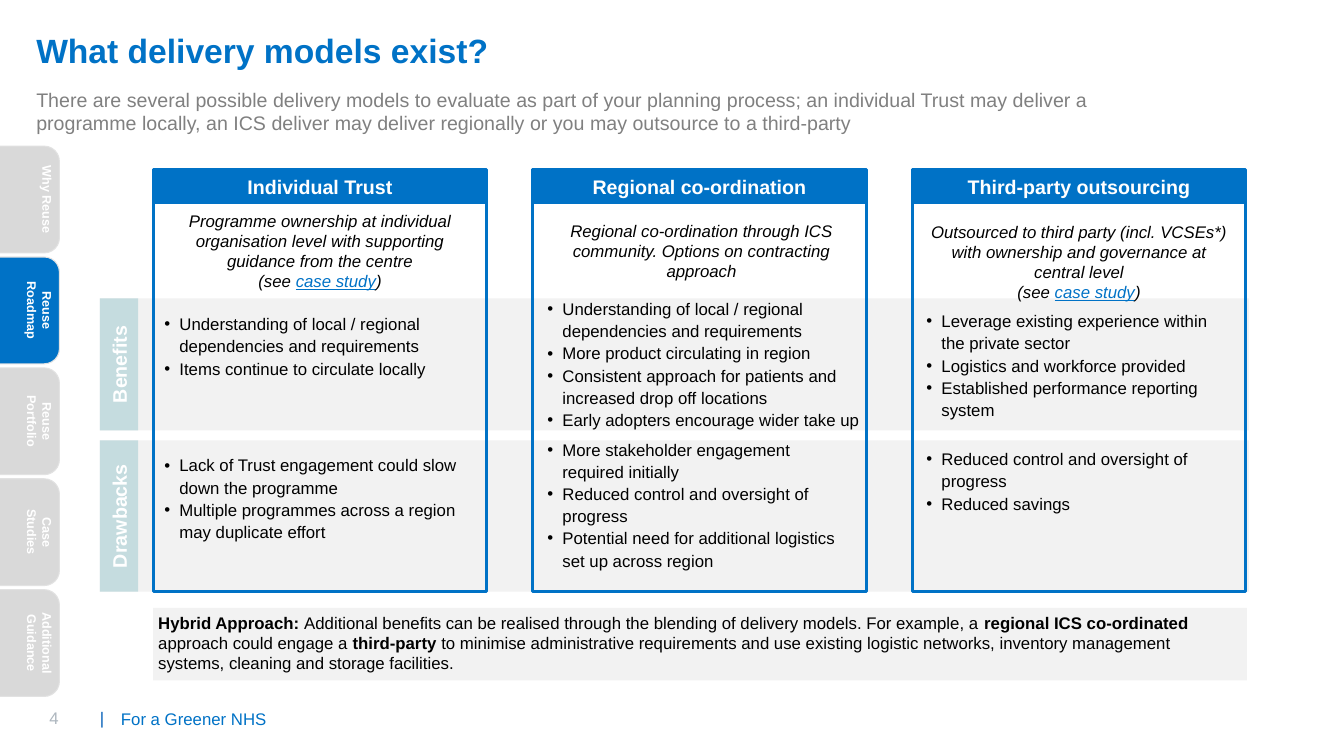
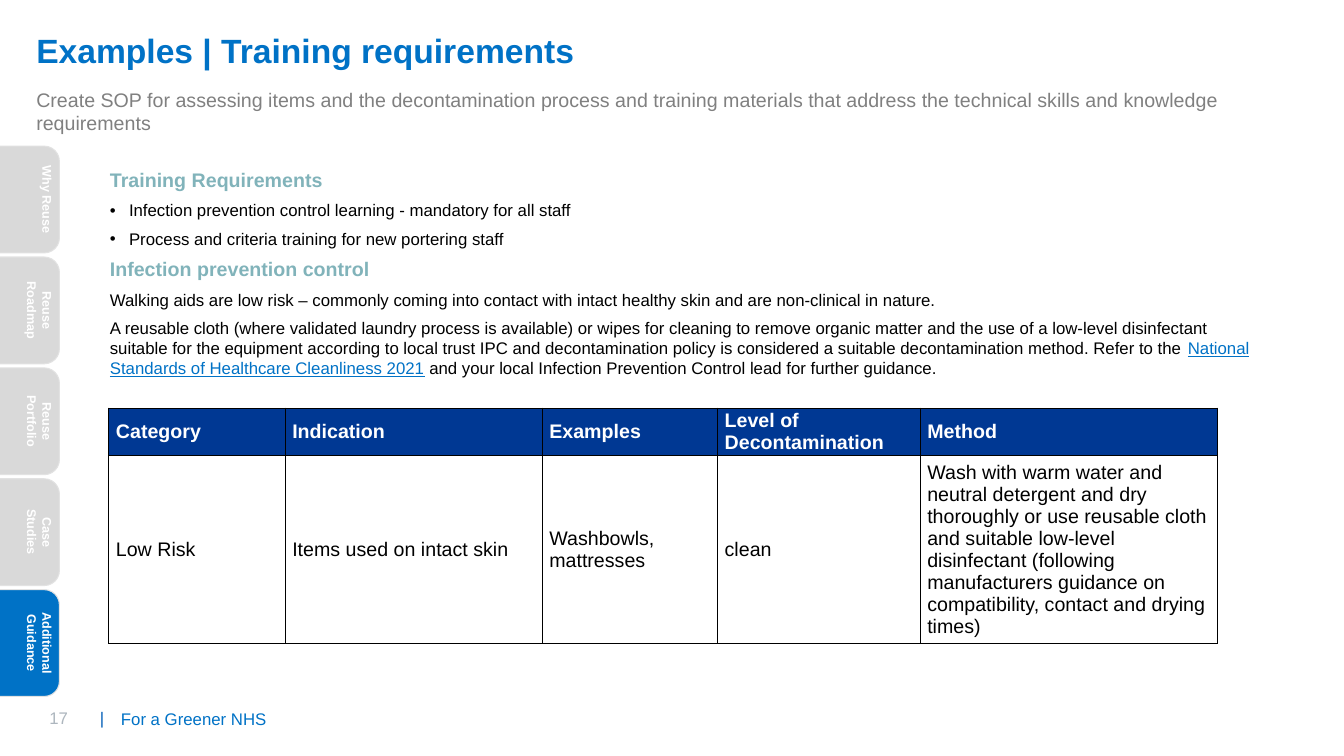
"""Build two slides on reuse programmes: delivery models and training requirements."""
import lxml.etree
import pptx
import pptx.dml.color
import pptx.enum.shapes
import pptx.enum.text
import pptx.oxml.ns
import pptx.util


class Theme:
    FONT = "Arial"
    BLUE, NAVY, BAR_BLUE = "0072C6", "003893", "005EB8"
    TEAL, PALE_TEAL = "81B3BA", "C5DCDF"
    GREY, PAGE_GREY, TAB_GREY = "808080", "ADB6BE", "D9D9D9"
    BAND, EDGE, WHITE, BLACK = "F2F2F2", "E2E2E2", "FFFFFF", "000000"
    TITLE, HEADING, BODY, TAB = 24, 14, 12, 9
    THIN, FRAME = 0.75, 2.25


qn = pptx.oxml.ns.qn
rgb = pptx.dml.color.RGBColor.from_string
RECTANGLE = pptx.enum.shapes.MSO_SHAPE.RECTANGLE
ROUNDED = pptx.enum.shapes.MSO_SHAPE.ROUNDED_RECTANGLE
TOP = pptx.enum.text.MSO_ANCHOR.TOP
MIDDLE = pptx.enum.text.MSO_ANCHOR.MIDDLE
CENTER = pptx.enum.text.PP_ALIGN.CENTER

presentation = pptx.Presentation()
presentation.slide_width = pptx.util.Inches(13.33)
presentation.slide_height = pptx.util.Inches(7.5)
COLUMN = presentation.slide_width / 80
ROW = presentation.slide_height / 45


def add_box(slide, left, top, width, height, kind=None, fill=None, line=None,
            line_width=Theme.THIN, anchor=TOP, inset=(0.3, 0.3), vertical=None):
    """Add a text box or shape placed in grid columns and rows."""
    area = [round(left * COLUMN), round(top * ROW), round(width * COLUMN), round(height * ROW)]
    if kind is None:
        shape = slide.shapes.add_textbox(*area)
    else:
        shape = slide.shapes.add_shape(kind, *area)
        shape.shadow.inherit = False
        if fill:
            shape.fill.solid()
            shape.fill.fore_color.rgb = rgb(fill)
        else:
            shape.fill.background()
        if line:
            shape.line.color.rgb = rgb(line)
            shape.line.width = pptx.util.Pt(line_width)
        else:
            shape.line.fill.background()
    frame = shape.text_frame
    frame.word_wrap = True
    frame.vertical_anchor = anchor
    frame.margin_left = frame.margin_right = round(inset[0] * COLUMN)
    frame.margin_top = frame.margin_bottom = round(inset[1] * ROW)
    if vertical:
        frame._txBody.bodyPr.set("vert", vertical)
    return shape


def write(frame, *runs, align=pptx.enum.text.PP_ALIGN.LEFT, spacing=None, after=None,
          indent=0, hang=0, tab=None, **style):
    """Write one paragraph; a run is a string or a (string, style changes) pair."""
    paragraph = frame.paragraphs[0]
    if paragraph.runs:
        paragraph = frame.add_paragraph()
    paragraph.alignment = align
    properties = paragraph._p.get_or_add_pPr()
    properties.set("marL", str(round(indent * COLUMN)))
    properties.set("indent", str(round(-hang * COLUMN)))
    if hang:
        lxml.etree.SubElement(properties, qn("a:buFont"), typeface=Theme.FONT)
        lxml.etree.SubElement(properties, qn("a:buChar"), char="•")
    if tab:
        tabs = lxml.etree.SubElement(properties, qn("a:tabLst"))
        lxml.etree.SubElement(tabs, qn("a:tab"), pos=str(round(tab * COLUMN)), algn="l")
    if spacing:
        paragraph.line_spacing = spacing
    if after:
        paragraph.space_after = pptx.util.Pt(after)
    for item in runs:
        text, changes = (item, {}) if isinstance(item, str) else item
        look = {"size": Theme.BODY, "color": Theme.BLACK} | style | changes
        run = paragraph.add_run()
        run.text = text
        run.font.name = Theme.FONT
        run.font.size = pptx.util.Pt(look["size"])
        run.font.color.rgb = rgb(look["color"])
        run.font.bold = look.get("bold", False)
        run.font.italic = look.get("italic", False)
        run.font.underline = look.get("underline", False)


LINK = {"color": Theme.BLUE, "underline": True}
BOLD = {"bold": True}
WHITE_HEADING = {"size": Theme.HEADING, "color": Theme.WHITE, "bold": True}

tab_names = ["Why Reuse", "Reuse Roadmap", "Reuse Portfolio", "Case Studies", "Additional Guidance"]
pages = [
    ("4", "What delivery models exist?", "Reuse Roadmap", 65.4,
     "There are several possible delivery models to evaluate as part of your planning process; "
     "an individual Trust may deliver a programme locally, an ICS deliver may deliver regionally "
     "or you may outsource to a third-party"),
    ("17", "Examples | Training requirements", "Additional Guidance", 71.7,
     "Create SOP for assessing items and the decontamination process and training materials that "
     "address the technical skills and knowledge requirements"),
]

for number, title, active_tab, subtitle_width, subtitle in pages:
    slide = presentation.slides.add_slide(presentation.slide_layouts[6])
    footer = add_box(slide, 6.6, 41.58, 46.2, 2.4, anchor=MIDDLE, inset=(0.6, 0.3))
    write(footer.text_frame, "For a Greener NHS", color=Theme.BLUE)
    page_number = add_box(slide, 2.34, 41.82, 5.22, 1.8, inset=(0.6, 0.3))
    write(page_number.text_frame, number, ("\t|", {"color": Theme.BAR_BLUE}),
          color=Theme.PAGE_GREY, tab=0.83 + 0.56 * len(number))
    heading = add_box(slide, 2.16, 1.5, 65.4, 3.2, inset=(0, 0.3))
    write(heading.text_frame, title, size=Theme.TITLE, color=Theme.BLUE, bold=True)
    summary = add_box(slide, 2.16, 4.92, subtitle_width, 3.24, inset=(0, 0.3))
    write(summary.text_frame, subtitle, size=Theme.HEADING, color=Theme.GREY)
    for index, name in enumerate(tab_names):
        fill = Theme.BLUE if name == active_tab else Theme.TAB_GREY
        side_tab = add_box(slide, -1.2, 8.7 + 6.6 * index, 4.74, 6.36, ROUNDED, fill, Theme.EDGE,
                           inset=(0, 0.6), vertical="vert")
        side_tab.adjustments[0] = 0.19
        write(side_tab.text_frame, name, align=CENTER, size=Theme.TAB, color=Theme.WHITE, bold=True)

delivery_slide, training_slide = presentation.slides

for name, top, height in [("Benefits", 17.76, 7.86), ("Drawbacks", 26.22, 9)]:
    add_box(delivery_slide, 5.94, top, 68.4, height, RECTANGLE, Theme.BAND)
    label = add_box(delivery_slide, 5.94, top, 2.28, height, RECTANGLE, Theme.PALE_TEAL,
                    anchor=MIDDLE, vertical="vert270")
    write(label.text_frame, name, align=CENTER, **WHITE_HEADING)

case_study = ["(see ", ("case study", LINK), ")"]
models = [
    ("Individual Trust", 0.36,
     (12.12, 5.64, 19.14, [
         ["Programme ownership at individual organisation level with supporting guidance from the centre"],
         case_study]),
     (18.24, 4.62, 19.14, [
         "Understanding of local / regional dependencies and requirements",
         "Items continue to circulate locally"]),
     (26.64, 5.94, 19.14, [
         "Lack of Trust engagement could slow down the programme",
         "Multiple programmes across a region may duplicate effort"])),
    ("Regional co-ordination", 0.57,
     (12.78, 4.32, 18.96, [
         ["Regional co-ordination through ICS community. Options on contracting approach"]]),
     (17.34, 8.58, 19.38, [
         "Understanding of local / regional dependencies and requirements",
         "More product circulating in region",
         "Consistent approach for patients and increased drop off locations",
         "Early adopters encourage wider take up"]),
     (25.68, 8.64, 18.96, [
         "More stakeholder engagement required initially",
         "Reduced control and oversight of progress",
         "Potential need for additional logistics set up across region"])),
    ("Third-party outsourcing", 0.54,
     (12.84, 5.46, 18.78, [
         ["Outsourced to third party (incl. VCSEs*) with ownership and governance at central level"],
         case_study]),
     (18.06, 7.26, 18.78, [
         "Leverage existing experience within the private sector",
         "Logistics and workforce provided",
         "Established performance reporting system"]),
     (26.28, 4.62, 18.78, [
         "Reduced control and oversight of progress",
         "Reduced savings"])),
]

for index, (name, offset, intro, *bullet_blocks) in enumerate(models):
    left = 9.12 + 22.59 * index
    add_box(delivery_slide, left, 10.1, 19.86, 25.1, RECTANGLE, line=Theme.BLUE, line_width=Theme.FRAME)
    header = add_box(delivery_slide, left, 10.1, 19.86, 2.04, RECTANGLE, Theme.BLUE, Theme.BLUE,
                     anchor=MIDDLE)
    write(header.text_frame, name, align=CENTER, **WHITE_HEADING)
    top, height, width, lines = intro
    intro_box = add_box(delivery_slide, left + offset, top, width, height, anchor=MIDDLE)
    for runs in lines:
        write(intro_box.text_frame, *runs, align=CENTER, italic=True)
    for top, height, width, lines in bullet_blocks:
        bullet_box = add_box(delivery_slide, left + offset, top, width, height, anchor=MIDDLE)
        for text in lines:
            write(bullet_box.text_frame, text, spacing=1.1, indent=0.9, hang=0.9)

hybrid = add_box(delivery_slide, 9.12, 36.18, 65.1, 4.32, RECTANGLE, Theme.BAND)
write(hybrid.text_frame,
      ("Hybrid Approach: ", BOLD),
      "Additional benefits can be realised through the blending of delivery models. For example, a ",
      ("regional ICS co-ordinated ", BOLD),
      "approach could engage a ",
      ("third-party ", BOLD),
      "to minimise administrative requirements and use existing logistic networks, "
      "inventory management systems, cleaning and storage facilities.")

guidance = add_box(training_slide, 5.7, 9.72, 69.72, 14.94, inset=(0.6, 0.3)).text_frame
section = {"size": Theme.HEADING, "color": Theme.TEAL, "bold": True, "indent": 0.24, "after": 6}
bullet = {"indent": 1.38, "hang": 1.14, "after": 6}
plain = {"indent": 0.24, "after": 6}
guidance_paragraphs = [
    (["Training Requirements"], section),
    (["Infection prevention control learning - mandatory for all staff"], bullet),
    (["Process and criteria training for new portering staff"], bullet),
    (["Infection prevention control"], section),
    (["Walking aids are low risk – commonly coming into contact with intact healthy skin "
      "and are non-clinical in nature."], plain),
    (["A reusable cloth (where validated laundry process is available) or wipes for cleaning to "
      "remove organic matter and the use of a low-level disinfectant suitable for the "
      "equipment according to local trust IPC and decontamination policy is considered a suitable "
      "decontamination method. Refer to the ",
      ("National Standards of Healthcare Cleanliness 2021", LINK),
      " and your local Infection Prevention Control lead for further guidance."], plain),
]
for runs, paragraph_format in guidance_paragraphs:
    write(guidance, *runs, **paragraph_format)

table_rows = [
    ["Category", "Indication", "Examples", "Level of Decontamination", "Method"],
    ["Low Risk", "Items used on intact skin", "Washbowls, mattresses", "clean",
     "Wash with warm water and neutral detergent and dry thoroughly or use reusable cloth and "
     "suitable low-level disinfectant (following manufacturers guidance on compatibility, "
     "contact and drying times)"],
]
column_widths = [10.5, 15.3, 10.44, 12.06, 17.7]
row_heights = [2.8, 11.2]
table = training_slide.shapes.add_table(
    len(row_heights), len(column_widths), round(6.48 * COLUMN), round(24.3 * ROW),
    round(sum(column_widths) * COLUMN), round(sum(row_heights) * ROW)).table
for column, width in zip(table.columns, column_widths):
    column.width = round(width * COLUMN)
for row, height, texts in zip(table.rows, row_heights, table_rows):
    row.height = round(height * ROW)
    is_header = texts is table_rows[0]
    for cell, text in zip(row.cells, texts):
        cell.vertical_anchor = MIDDLE
        cell.margin_left = cell.margin_right = round(0.42 * COLUMN)
        cell.margin_top = cell.margin_bottom = 0
        for side in ("a:lnL", "a:lnR", "a:lnT", "a:lnB"):
            border = lxml.etree.SubElement(cell._tc.get_or_add_tcPr(), qn(side),
                                           w=str(pptx.util.Pt(1)))
            border_fill = lxml.etree.SubElement(border, qn("a:solidFill"))
            lxml.etree.SubElement(border_fill, qn("a:srgbClr"), val=Theme.BLACK)
        cell.fill.solid()
        cell.fill.fore_color.rgb = rgb(Theme.NAVY if is_header else Theme.WHITE)
        write(cell.text_frame, text, **(WHITE_HEADING if is_header else {"size": Theme.HEADING}))

presentation.save("out.pptx")
